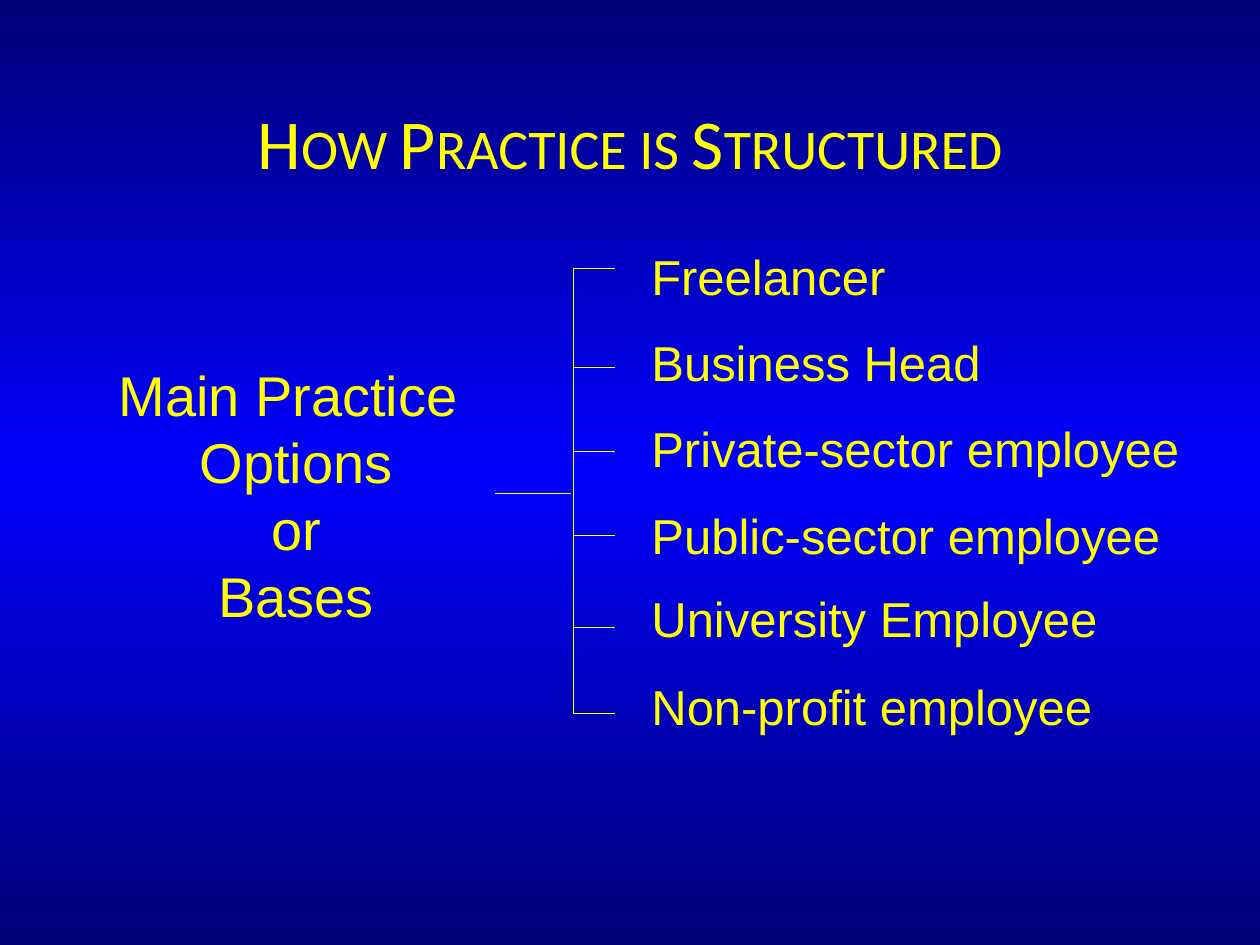
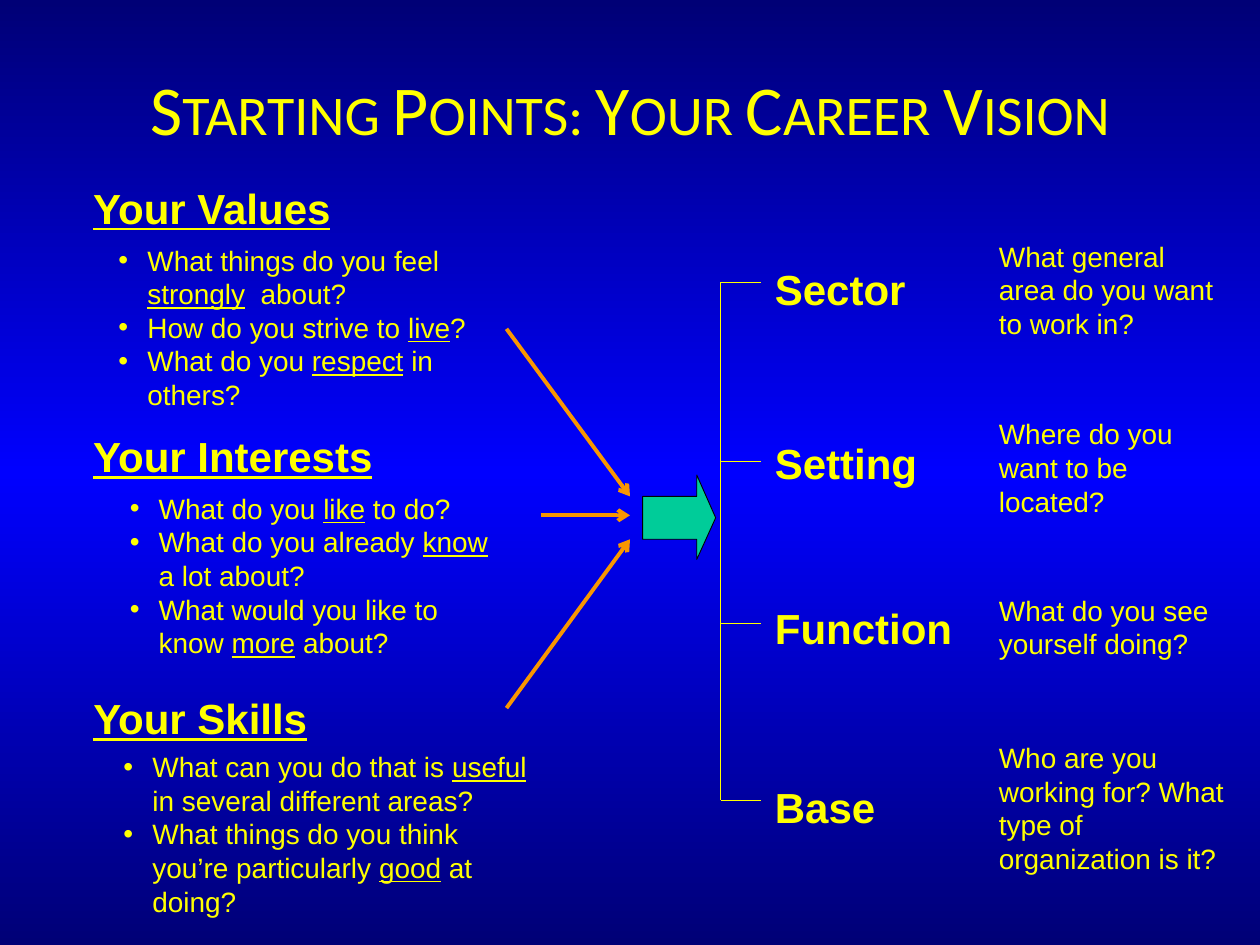
"""Build two career-planning slides: practice options and career vision."""
from copy import deepcopy
from typing import NamedTuple, Sequence

from lxml.etree import SubElement
from pptx import Presentation
from pptx.dml.color import RGBColor
from pptx.enum.shapes import MSO_CONNECTOR
from pptx.enum.text import MSO_ANCHOR, MSO_AUTO_SIZE, PP_ALIGN
from pptx.oxml.ns import qn
from pptx.presentation import Presentation as Deck
from pptx.shapes.connector import Connector
from pptx.slide import Slide
from pptx.text.text import TextFrame
from pptx.util import Inches, Pt

NAVY = RGBColor(0x00, 0x00, 0x76)
BLUE = RGBColor(0x00, 0x00, 0xFF)
YELLOW = RGBColor(0xFF, 0xFF, 0x00)
ORANGE = RGBColor(0xF9, 0x96, 0x00)
GREEN = RGBColor(0x00, 0xCC, 0x99)
BLACK = RGBColor(0x00, 0x00, 0x00)

BODY_FONT = "Arial"
TITLE_FONT = "Calibri"
LINE_PITCH = 1.2
BULLET_INDENT = Inches(0.23)
TITLE_ONLY, COMPARISON = 5, 4


class Box(NamedTuple):
    left: float
    top: float
    width: float
    height: float


class Style(NamedTuple):
    size: int
    bold: bool = False
    underline: bool = False
    align: PP_ALIGN = PP_ALIGN.LEFT


class Topic(NamedTuple):
    heading: str
    heading_box: Box
    questions: Sequence[str]
    questions_box: Box


class Dimension(NamedTuple):
    label: str
    label_box: Box
    question: str
    question_box: Box


class Bracket(NamedTuple):
    spine_x: float
    tick_end: float
    tick_tops: Sequence[float]
    weight: float


OPTION = Style(28)
MAIN = Style(32, align=PP_ALIGN.CENTER)
HEADING = Style(24, bold=True, underline=True)
LABEL = Style(24, bold=True)
QUESTION = Style(16)

OPTIONS = [
    ("Freelancer", 1.96, 1.86),
    ("Business Head", 2.64, 2.62),
    ("Private-sector employee", 3.32, 4.2),
    ("Public-sector employee", 4.01, 4.05),
    ("University Employee", 4.67, 3.55),
    ("Non-profit employee", 5.37, 3.51),
]
PRACTICE_BRACKET = Bracket(4.55, 4.88, (2.13, 2.92, 3.58, 4.25, 4.98, 5.66), 0.63)
VISION_BRACKET = Bracket(5.72, 6.04, (2.24, 3.66, 4.95, 6.35), 0.5)

TOPICS = [
    Topic("Your Values", Box(0.74, 1.45, 1.9, 0.4),
          ["What things do you feel _strongly_  about?",
           "How do you strive to _live_?",
           "What do you _respect_ in others?"],
          Box(0.84, 1.88, 3.18, 1.45)),
    Topic("Your Interests", Box(0.74, 3.42, 2.24, 0.4),
          ["What do you _like_ to do?",
           "What do you already _know_ a lot about?",
           "What would you like to know _more_ about?"],
          Box(0.93, 3.85, 3.17, 1.45)),
    Topic("Your Skills", Box(0.74, 5.5, 1.71, 0.4),
          ["What can you do that is _useful_ in several different areas?",
           "What things do you think you’re particularly _good_ at doing?"],
          Box(0.88, 5.9, 3.42, 1.18)),
]
DIMENSIONS = [
    Dimension("Sector", Box(6.15, 2.09, 1.05, 0.4),
              "What general area do you want to work in?", Box(7.83, 1.85, 1.92, 0.91)),
    Dimension("Setting", Box(6.15, 3.47, 1.14, 0.4),
              "Where do you want to be located?", Box(7.83, 3.26, 1.97, 0.91)),
    Dimension("Function", Box(6.15, 4.78, 1.42, 0.4),
              "What do you see yourself doing?", Box(7.83, 4.66, 1.92, 0.64)),
    Dimension("Base", Box(6.15, 6.2, 0.81, 0.4),
              "Who are you working for? What type of organization is it?",
              Box(7.83, 5.83, 2.07, 1.18)),
]
TOPIC_ARROWS = [
    ((4.02, 2.61), (5, 3.94)),
    ((4.29, 4.09), (5, 4.09)),
    ((4.02, 5.62), (5, 4.28)),
]
VISION_ARROW = [(5.53, 3.77), (5.53, 3.94), (5.1, 3.94), (5.1, 4.28),
                (5.53, 4.28), (5.53, 4.44), (5.68, 4.11)]


def paint_background(deck: Deck) -> None:
    """Give the master a navy-blue-navy vertical gradient."""
    fill = deck.slide_master.background.fill
    fill.gradient()
    fill.gradient_angle = 90
    stop_list = deck.slide_master.element.find(f".//{qn('p:bg')}//{qn('a:gsLst')}")
    stop_list.append(deepcopy(stop_list[-1]))
    for stop, colour, position in zip(fill.gradient_stops, (NAVY, BLUE, NAVY), (0, 0.5, 1)):
        stop.color.rgb = colour
        stop.position = position


def place(shape, box: Box) -> None:
    """Move and size a shape."""
    shape.left, shape.top, shape.width, shape.height = map(Inches, box)


def add_titled_slide(deck: Deck, layout: int, title: str, top: float) -> Slide:
    """Add a slide with a small-caps title."""
    slide = deck.slides.add_slide(deck.slide_layouts[layout])
    heading = slide.shapes.title
    place(heading, Box(0.75, top, 8.5, 1.25))
    frame = heading.text_frame
    frame.text = title
    frame.vertical_anchor = MSO_ANCHOR.MIDDLE
    frame.auto_size = MSO_AUTO_SIZE.NONE
    frame.paragraphs[0].alignment = PP_ALIGN.CENTER
    font = frame.paragraphs[0].runs[0].font
    font.name, font.size = TITLE_FONT, Pt(40)
    font.color.rgb = YELLOW
    frame.paragraphs[0].runs[0]._r.get_or_add_rPr().set("cap", "small")
    return slide


def format_text(frame: TextFrame, style: Style) -> None:
    """Apply a style to all paragraphs and runs of a frame."""
    for paragraph in frame.paragraphs:
        paragraph.alignment = style.align
        paragraph.line_spacing = Pt(style.size * LINE_PITCH)
        paragraph.space_before = Pt(0)
        for run in paragraph.runs:
            font = run.font
            font.name, font.size, font.bold = BODY_FONT, Pt(style.size), style.bold
            font.color.rgb = YELLOW
            if style.underline:
                font.underline = True


def add_text(slide: Slide, text: str, box: Box, style: Style, wrap: bool = False) -> None:
    """Add a text box; unwrapped boxes have no insets."""
    frame = slide.shapes.add_textbox(*map(Inches, box)).text_frame
    frame.word_wrap = wrap
    if not wrap:
        frame.margin_left = frame.margin_right = 0
        frame.margin_top = frame.margin_bottom = 0
    frame.text = text
    format_text(frame, style)


def fill_questions(placeholder, topic: Topic) -> None:
    """Fill a body placeholder with bullets, underlining marked words."""
    place(placeholder, topic.questions_box)
    frame = placeholder.text_frame
    frame.vertical_anchor = MSO_ANCHOR.TOP
    frame.auto_size = MSO_AUTO_SIZE.NONE
    for number, question in enumerate(topic.questions):
        paragraph = frame.add_paragraph() if number else frame.paragraphs[0]
        for part, words in enumerate(question.split("_")):
            run = paragraph.add_run()
            run.text = words
            run.font.underline = part % 2 == 1
    format_text(frame, QUESTION)
    for paragraph in frame.paragraphs:
        properties = paragraph._p.get_or_add_pPr()
        properties.set("marL", str(BULLET_INDENT))
        properties.set("indent", str(-BULLET_INDENT))
        SubElement(properties, qn("a:buFont"), typeface=BODY_FONT)
        SubElement(properties, qn("a:buChar"), char="•")


def add_line(slide: Slide, start: tuple[float, float], end: tuple[float, float],
             weight: float, colour: RGBColor = YELLOW) -> Connector:
    """Add a straight line without shadow."""
    line = slide.shapes.add_connector(
        MSO_CONNECTOR.STRAIGHT, *map(Inches, (*start, *end)))
    line.line.color.rgb = colour
    line.line.width = Pt(weight)
    SubElement(line._element.spPr, qn("a:effectLst"))
    return line


def add_bracket(slide: Slide, bracket: Bracket) -> None:
    """Draw a vertical spine with a tick for each branch."""
    x, tops = bracket.spine_x, bracket.tick_tops
    add_line(slide, (x, tops[0]), (x, tops[-1]), bracket.weight)
    for top in tops:
        add_line(slide, (x, top), (bracket.tick_end, top), bracket.weight)


def add_vision_arrow(slide: Slide) -> None:
    """Draw the block arrow that leads to the bracket."""
    points = [(Inches(x), Inches(y)) for x, y in VISION_ARROW]
    builder = slide.shapes.build_freeform(*points[0])
    builder.add_line_segments(points[1:], close=True)
    arrow = builder.convert_to_shape()
    arrow.shadow.inherit = False
    arrow.fill.solid()
    arrow.fill.fore_color.rgb = GREEN
    arrow.line.color.rgb = BLACK
    arrow.line.width = Pt(0.5)


def build_practice(deck: Deck) -> None:
    """Build the slide of practice options."""
    slide = add_titled_slide(deck, TITLE_ONLY, "How Practice is Structured", 0.5)
    add_text(slide, "Main Practice \nOptions\nor\nBases", Box(0.93, 2.86, 2.84, 2.15), MAIN)
    for option, top, width in OPTIONS:
        add_text(slide, option, Box(5.17, top, width, 0.47), OPTION)
    add_bracket(slide, PRACTICE_BRACKET)
    add_line(slide, (4.53, 3.92), (3.93, 3.92), PRACTICE_BRACKET.weight)


def build_vision(deck: Deck) -> None:
    """Build the slide that leads from personal topics to a career vision."""
    slide = add_titled_slide(deck, COMPARISON, "Starting Points: Your Career Vision", 0.23)
    bodies = list(slide.placeholders)[1:]
    for topic, body in zip(TOPICS, bodies):
        add_text(slide, topic.heading, topic.heading_box, HEADING)
        fill_questions(body, topic)
    for unused in bodies[len(TOPICS):]:
        unused.element.getparent().remove(unused.element)
    for dimension in DIMENSIONS:
        add_text(slide, dimension.label, dimension.label_box, LABEL)
        add_text(slide, dimension.question, dimension.question_box, QUESTION, wrap=True)
    add_vision_arrow(slide)
    add_bracket(slide, VISION_BRACKET)
    for start, end in TOPIC_ARROWS:
        arrow = add_line(slide, start, end, 2.25, ORANGE)
        SubElement(arrow.line._get_or_add_ln(), qn("a:tailEnd"), type="arrow")


def main() -> None:
    """Create and save the presentation."""
    deck = Presentation()
    deck.slide_width, deck.slide_height = Inches(10), Inches(7.5)
    paint_background(deck)
    build_practice(deck)
    build_vision(deck)
    deck.save("out.pptx")


if __name__ == "__main__":
    main()
